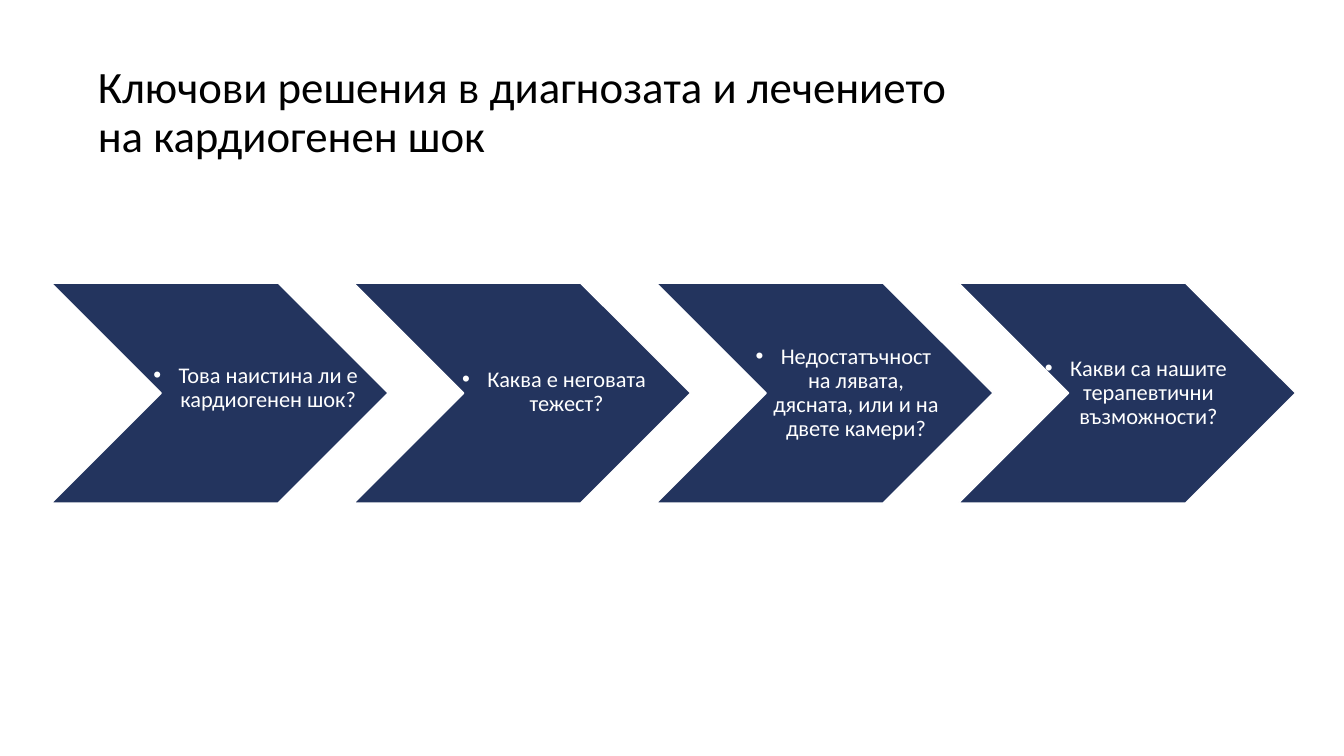
"""Build a slide with four key questions on cardiogenic shock in a row of chevrons."""
from lxml import etree
from pptx import Presentation
from pptx.dml.color import RGBColor
from pptx.enum import shapes, text
from pptx.oxml import ns
from pptx.util import Inches, Pt

TITLE = "Ключови решения в диагнозата и лечението\vна кардиогенен шок"
QUESTIONS = [
    ("Това наистина ли е кардиогенен шок?", (1.39, 3, 2.29, 1.7)),
    ("Каква е неговата тежест?", (4.52, 3.44, 1.95, 0.91)),
    ("Недостатъчност на лявата, дясната, или и на двете камери?", (7.39, 2.81, 1.95, 2.18)),
    ("Какви са нашите терапевтични възможности?", (10.34, 2.81, 1.85, 2.18)),
]
COLORS = {"title": "000000", "chevron": "23345E", "light": "FFFFFF"}
FONT = "Calibri"
CHEVRON_LEFT, CHEVRON_TOP, CHEVRON_STEP = 0.51, 2.81, 3.0
CHEVRON_WIDTH, CHEVRON_HEIGHT = 3.34, 2.18


def color(name):
    """Return the named colour."""
    return RGBColor.from_string(COLORS[name])


def format_text(frame, size, color_name, margin):
    """Set the layout of a text frame and return its paragraph."""
    frame.word_wrap = True
    frame.auto_size = text.MSO_AUTO_SIZE.NONE
    frame.vertical_anchor = text.MSO_ANCHOR.MIDDLE
    frame.margin_left = frame.margin_right = Inches(margin)
    frame.margin_top = frame.margin_bottom = Inches(margin)
    paragraph = frame.paragraphs[0]
    paragraph.line_spacing = 0.9
    paragraph.font.name = FONT
    paragraph.font.size = Pt(size)
    paragraph.font.color.rgb = color(color_name)
    return paragraph


def add_bullet(paragraph):
    """Give the paragraph a round bullet with a hanging indent."""
    properties = paragraph._p.get_or_add_pPr()
    properties.set("marL", str(Inches(0.25)))
    properties.set("indent", str(Inches(-0.25)))
    bullet_font = etree.SubElement(properties, ns.qn("a:buFont"))
    bullet_font.set("typeface", "Arial")
    etree.SubElement(properties, ns.qn("a:buChar")).set("char", "•")


def add_chevron(slide, index):
    """Draw the chevron at the given place in the row."""
    chevron = slide.shapes.add_shape(
        shapes.MSO_SHAPE.CHEVRON,
        Inches(CHEVRON_LEFT + index * CHEVRON_STEP), Inches(CHEVRON_TOP),
        Inches(CHEVRON_WIDTH), Inches(CHEVRON_HEIGHT))
    chevron.adjustments[0] = 0.5
    chevron.shadow.inherit = False
    chevron.fill.solid()
    chevron.fill.fore_color.rgb = color("chevron")
    chevron.line.color.rgb = color("light")
    chevron.line.width = Pt(1)


def add_question(slide, question, box):
    """Place a bulleted question over its chevron."""
    frame = slide.shapes.add_textbox(*map(Inches, box)).text_frame
    frame.text = question
    add_bullet(frame.paragraphs[0])
    paragraph = format_text(frame, 16, "light", 0.02)
    paragraph.alignment = text.PP_ALIGN.CENTER


def main():
    """Build and save the presentation."""
    presentation = Presentation()
    presentation.slide_width, presentation.slide_height = Inches(13.33), Inches(7.5)
    slide = presentation.slides.add_slide(presentation.slide_layouts[5])
    title = slide.shapes.title
    title.left, title.top, title.width, title.height = map(Inches, (0.92, 0.4, 11.5, 1.45))
    title.text_frame.text = TITLE
    format_text(title.text_frame, 32, "title", 0.05).alignment = text.PP_ALIGN.LEFT
    for index, (question, box) in enumerate(QUESTIONS):
        add_chevron(slide, index)
        add_question(slide, question, box)
    presentation.save("out.pptx")


if __name__ == "__main__":
    main()
